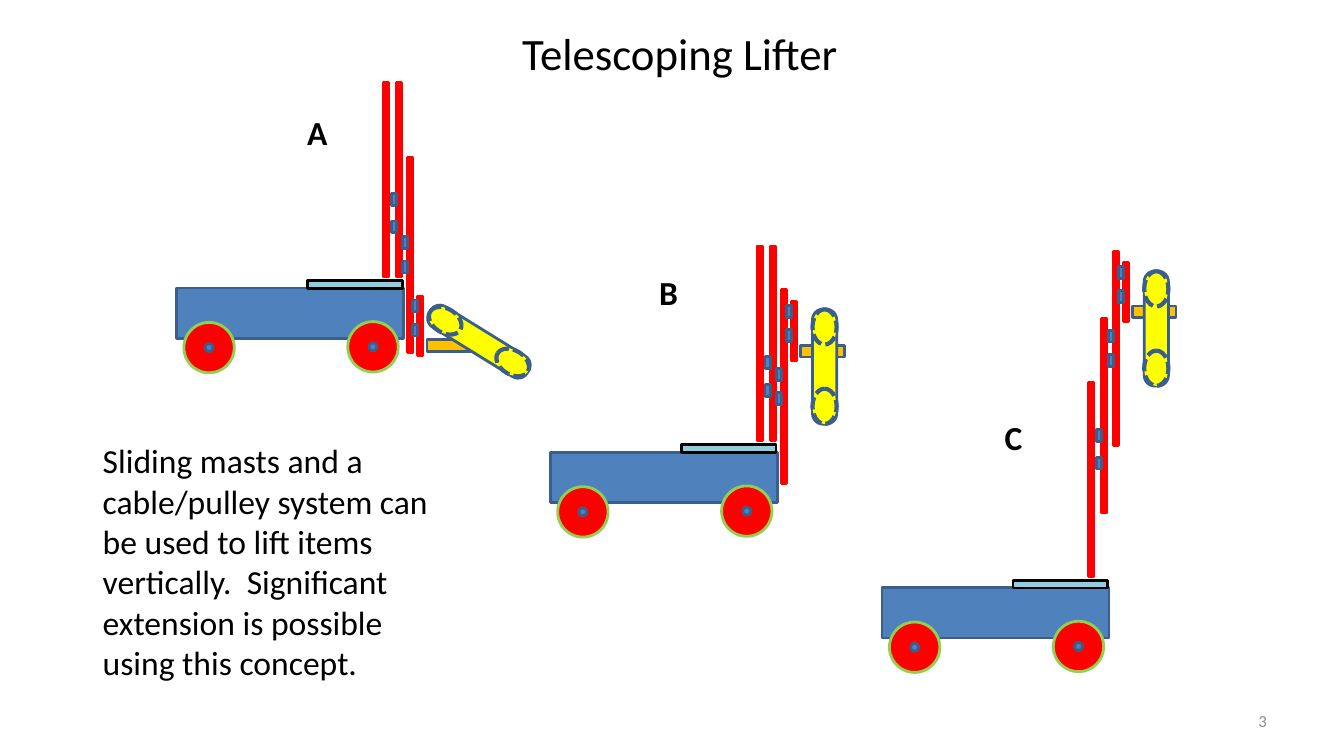
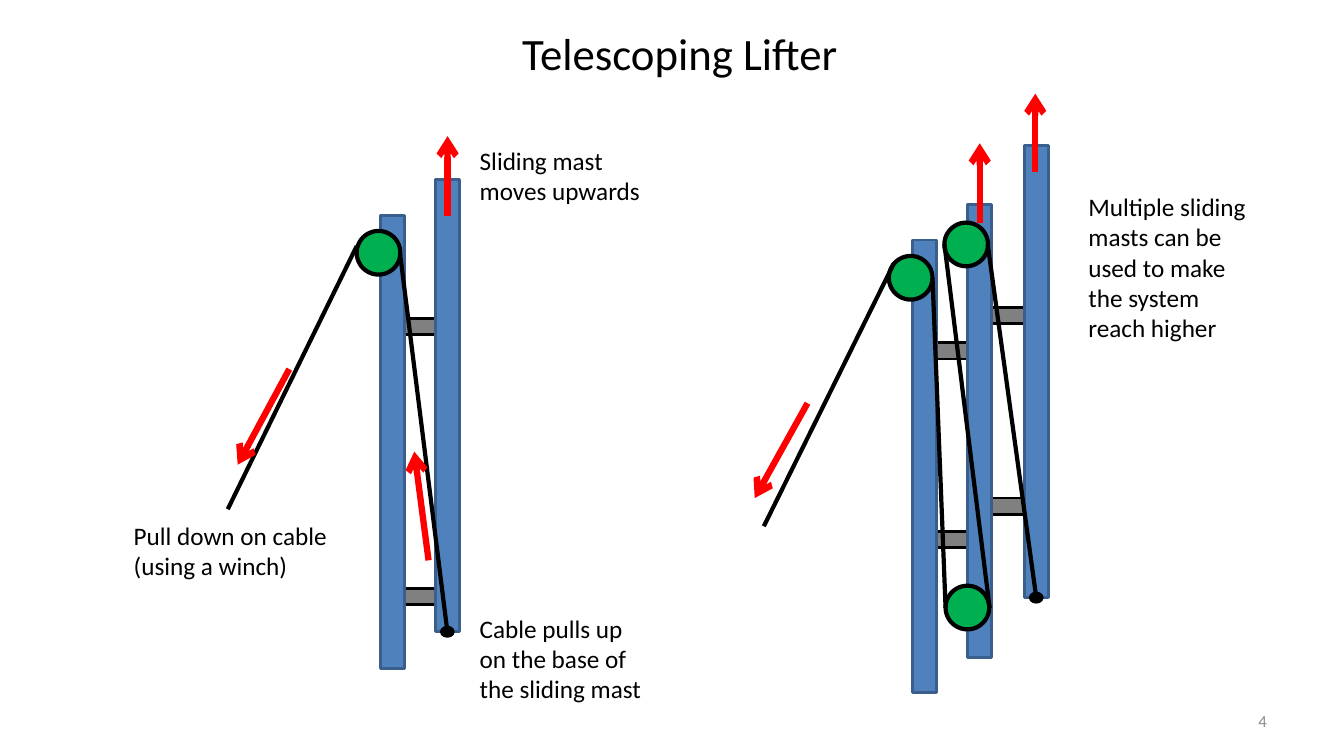
import math
from dataclasses import dataclass
from typing import Any, Optional

from lxml import etree
from pptx import Presentation
from pptx import util as u
from pptx.dml.color import RGBColor
from pptx.enum import dml, shapes, text
from pptx.oxml.ns import qn

BLACK = RGBColor(0x00, 0x00, 0x00)
GREY = RGBColor(0x80, 0x80, 0x80)
FOOTER_GREY = RGBColor(0x8C, 0x8C, 0x8C)
BLUE = RGBColor(0x4F, 0x81, 0xBD)
NAVY = RGBColor(0x3A, 0x5F, 0x8C)
SKY = RGBColor(0x93, 0xCD, 0xDD)
RED = RGBColor(0xFF, 0x00, 0x00)
LIME = RGBColor(0x92, 0xD0, 0x50)
GREEN = RGBColor(0x00, 0xB0, 0x50)
ORANGE = RGBColor(0xFF, 0xC0, 0x00)
YELLOW = RGBColor(0xFF, 0xFF, 0x00)

FONT = "Calibri"
RECT = shapes.MSO_SHAPE.RECTANGLE
ROUNDED = shapes.MSO_SHAPE.ROUNDED_RECTANGLE
OVAL = shapes.MSO_SHAPE.OVAL
LEFT, CENTER, RIGHT = text.PP_ALIGN.LEFT, text.PP_ALIGN.CENTER, text.PP_ALIGN.RIGHT

Point = tuple[float, float]


@dataclass(frozen=True)
class Paint:
    fill: RGBColor
    line: RGBColor
    width: float = 2
    dashed: bool = False


STEEL = Paint(BLUE, NAVY)
TYRE = Paint(RED, LIME)
DECK = Paint(SKY, BLACK)
RAIL = Paint(RED, RED)
FORK = Paint(ORANGE, NAVY)
TUBE = Paint(YELLOW, NAVY)
TUBE_END = Paint(YELLOW, NAVY, 3, True)
BEARING = Paint(GREY, BLACK)
PULLEY = Paint(GREEN, BLACK, 3)
ANCHOR = Paint(BLACK, BLACK)


@dataclass(frozen=True)
class Caption:
    words: str
    left: float
    top: float
    width: float
    height: float
    size: float = 18
    bold: bool = False
    align: Any = LEFT
    color: RGBColor = BLACK
    anchor: Any = text.MSO_ANCHOR.TOP


@dataclass(frozen=True)
class Rail:
    left: float
    length: float
    roller_offset: Optional[float] = None
    roller_gap: float = 0.61


RAILS = (
    Rail(5.21, 4.9),
    Rail(5.54, 4.9, 2.79, 0.7),
    Rail(5.83, 4.9, 1.99),
    Rail(6.08, 1.5, 0.1),
)


@dataclass(frozen=True)
class Lifter:
    label: Caption
    left: float
    top: float
    rail_tops: tuple[float, ...]
    load: Point
    load_angle: float


def stage_label(letter: str, left: float, top: float) -> Caption:
    return Caption(letter, left, top, 0.94, 1.27, 24, True)


LIFTERS = (
    Lifter(stage_label("A", 7.49, 2.69), 4.45, 7.26,
           (-5.18, -5.18, -3.28, 0.2), (7.62, 1.35), 31.7),
    Lifter(stage_label("B", 16.36, 6.73), 13.87, 11.4,
           (-5.2, -5.2, -4.11, -3.8), (6.91, -2.16), 90),
    Lifter(stage_label("C", 25.07, 10.39), 22.23, 14.81,
           (-5.18, -6.78, -8.48, -8.2), (6.91, -6.53), 90),
)


@dataclass(frozen=True)
class Stroke:
    start: Point
    end: Point


@dataclass(frozen=True)
class Mechanism:
    bearings: tuple[Point, ...]
    masts: tuple[Point, ...]
    pulleys: tuple[Point, ...]
    cables: tuple[Stroke, ...]
    lift_start: Point
    arrows: tuple[Stroke, ...]
    captions: tuple[Caption, ...]


MAST_WIDTH, MAST_HEIGHT = 0.61, 11.4

SINGLE = Mechanism(
    bearings=((10.19, 14.83), (10.08, 8.03)),
    masts=((9.58, 5.44), (10.97, 4.52)),
    pulleys=((8.99, 5.82),),
    cables=(Stroke((8.99, 6.2), (5.74, 12.83)),),
    lift_start=(10.08, 6.38),
    arrows=(
        Stroke((7.29, 9.3), (5.99, 11.71)),
        Stroke((10.8, 14.12), (10.44, 11.38)),
        Stroke((11.28, 5.44), (11.28, 3.43)),
    ),
    captions=(
        Caption("Pull down on cable (using a winch)", 3.12, 12.98, 5.66, 1.8),
        Caption("Cable pulls up on the base of the sliding mast", 11.84, 15.32, 4.7, 2.57),
        Caption("Sliding mast moves upwards", 11.84, 3.53, 4.7, 1.8),
    ),
)

DOUBLE = Mechanism(
    bearings=((24.99, 12.55), (24.94, 7.75), (23.5, 13.39), (23.6, 8.64)),
    masts=((22.99, 6.05), (24.38, 5.16), (25.81, 3.66)),
    pulleys=((22.4, 6.45), (23.83, 14.76), (23.8, 5.61)),
    cables=(
        Stroke((22.53, 6.63), (19.25, 13.26)),
        Stroke((23.5, 7.01), (23.83, 15.32)),
        Stroke((23.8, 6.15), (24.94, 15.32)),
    ),
    lift_start=(24.89, 6.15),
    arrows=(
        Stroke((26.09, 4.34), (26.09, 2.36)),
        Stroke((24.69, 5.61), (24.69, 3.61)),
        Stroke((20.35, 10.16), (19.02, 12.55)),
    ),
    captions=(
        Caption("Multiple sliding masts can be used to make the system reach higher",
                27.18, 4.7, 4.7, 4.11),
    ),
)


def draw_part(canvas: Any, kind: Any, left: float, top: float, width: float,
              height: float, paint: Paint, angle: float = 0) -> Any:
    part = canvas.add_shape(kind, u.Cm(left), u.Cm(top), u.Cm(width), u.Cm(height))
    part.shadow.inherit = False
    part.rotation = angle
    part.fill.solid()
    part.fill.fore_color.rgb = paint.fill
    part.line.color.rgb = paint.line
    part.line.width = u.Pt(paint.width)
    if paint.dashed:
        part.line.dash_style = dml.MSO_LINE.SQUARE_DOT
    return part


def draw_centred(canvas: Any, kind: Any, middle: Point, width: float,
                 height: float, paint: Paint, angle: float = 0) -> Any:
    return draw_part(canvas, kind, middle[0] - width / 2, middle[1] - height / 2,
                     width, height, paint, angle)


def draw_stroke(canvas: Any, stroke: Stroke, color: RGBColor, width: float,
                arrow: bool = False) -> Any:
    ends = [u.Cm(value) for value in (*stroke.start, *stroke.end)]
    line = canvas.add_connector(shapes.MSO_CONNECTOR.STRAIGHT, *ends)
    line.line.color.rgb = color
    line.line.width = u.Pt(width)
    properties = line._element.spPr
    if arrow:
        etree.SubElement(properties.find(qn("a:ln")), qn("a:tailEnd"), type="arrow")
    etree.SubElement(properties, qn("a:effectLst"))
    return line


def write(canvas: Any, caption: Caption) -> None:
    box = canvas.add_textbox(u.Cm(caption.left), u.Cm(caption.top),
                             u.Cm(caption.width), u.Cm(caption.height))
    frame = box.text_frame
    frame.word_wrap = True
    frame.vertical_anchor = caption.anchor
    paragraph = frame.paragraphs[0]
    paragraph.alignment = caption.align
    run = paragraph.add_run()
    run.text = caption.words
    run.font.name = FONT
    run.font.size = u.Pt(caption.size)
    run.font.bold = caption.bold
    run.font.color.rgb = caption.color


def draw_lifter(slide: Any, lifter: Lifter) -> None:
    canvas = slide.shapes.add_group_shape().shapes
    x, y = lifter.left, lifter.top
    draw_part(canvas, RECT, x, y, 5.72, 1.27, STEEL)
    for wheel_x, wheel_y in ((0.82, 1.5), (4.95, 1.48)):
        axle = (x + wheel_x, y + wheel_y)
        draw_centred(canvas, OVAL, axle, 1.27, 1.27, TYRE)
        draw_centred(canvas, OVAL, axle, 0.2, 0.2, STEEL)
    draw_part(canvas, RECT, x + 3.3, y - 0.19, 2.39, 0.2, DECK)
    for rail, top in zip(RAILS, lifter.rail_tops):
        draw_part(canvas, RECT, x + rail.left, y + top, 0.13, rail.length, RAIL)
        if rail.roller_offset is not None:
            for order in range(2):
                roller_top = y + top + rail.roller_offset + order * rail.roller_gap
                draw_part(canvas, RECT, x + rail.left - 0.13, roller_top, 0.13, 0.3, STEEL)
    draw_part(canvas, RECT, x + 6.31, y + lifter.rail_tops[-1] + 1.1, 1.1, 0.3, FORK)
    load_x, load_y = x + lifter.load[0], y + lifter.load[1]
    tube = draw_centred(canvas, ROUNDED, (load_x, load_y), 2.9, 0.61, TUBE, lifter.load_angle)
    tube.adjustments[0] = 0.44
    slope = math.radians(lifter.load_angle)
    for reach in (-1, 1):
        tip = (load_x + reach * math.cos(slope), load_y + reach * math.sin(slope))
        draw_centred(canvas, OVAL, tip, 0.89, 0.61, TUBE_END, lifter.load_angle)


def draw_mechanism(slide: Any, mechanism: Mechanism) -> None:
    canvas = slide.shapes.add_group_shape().shapes
    for left, top in mechanism.bearings:
        draw_part(canvas, RECT, left, top, 0.89, 0.41, BEARING)
    masts = [draw_part(canvas, RECT, left, top, MAST_WIDTH, MAST_HEIGHT, STEEL)
             for left, top in mechanism.masts]
    for left, top in mechanism.pulleys:
        draw_part(canvas, OVAL, left, top, 1.1, 1.1, PULLEY)
    for cable in mechanism.cables:
        draw_stroke(canvas, cable, BLACK, 3)
    last_left, last_top = mechanism.masts[-1]
    base = (last_left + MAST_WIDTH / 2, last_top + MAST_HEIGHT)
    lift_cable = draw_stroke(canvas, Stroke(mechanism.lift_start, base), BLACK, 3)
    lift_cable.end_connect(masts[-1], 2)
    for arrow in mechanism.arrows:
        draw_stroke(canvas, arrow, RED, 4.5, arrow=True)
    for caption in mechanism.captions:
        write(canvas, caption)
    draw_centred(canvas, OVAL, base, 0.3, 0.23, ANCHOR)


def add_page(deck: Any, number: int) -> Any:
    slide = deck.slides.add_slide(deck.slide_layouts[6])
    write(slide.shapes, Caption("Telescoping Lifter", 6.43, 0.53, 21.41, 1.63, 32, align=CENTER))
    write(slide.shapes, Caption(str(number), 24.28, 17.65, 7.9, 1.02, 12, align=RIGHT,
                                color=FOOTER_GREY, anchor=text.MSO_ANCHOR.MIDDLE))
    return slide


def main() -> None:
    deck = Presentation()
    deck.slide_width, deck.slide_height = u.Cm(33.87), u.Cm(19.05)

    stages = add_page(deck, 3)
    for lifter in LIFTERS:
        draw_lifter(stages, lifter)
        write(stages.shapes, lifter.label)
    write(stages.shapes, Caption(
        "Sliding masts and a cable/pulley system can be used to lift items vertically.  "
        "Significant extension is possible using this concept.",
        2.34, 10.97, 9.53, 6.4, 24))

    cabling = add_page(deck, 4)
    for mechanism in (SINGLE, DOUBLE):
        draw_mechanism(cabling, mechanism)

    deck.save("out.pptx")


if __name__ == "__main__":
    main()
